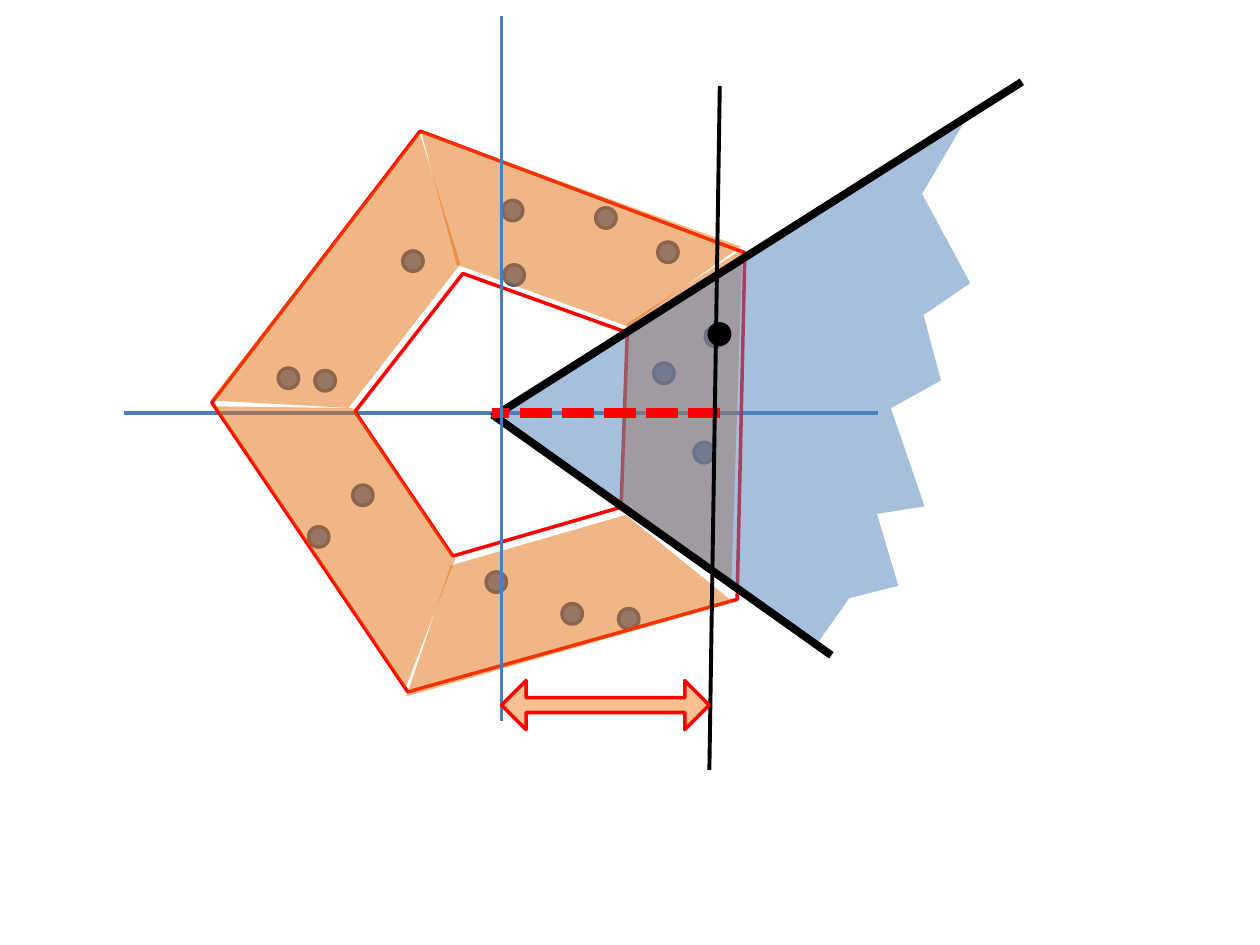
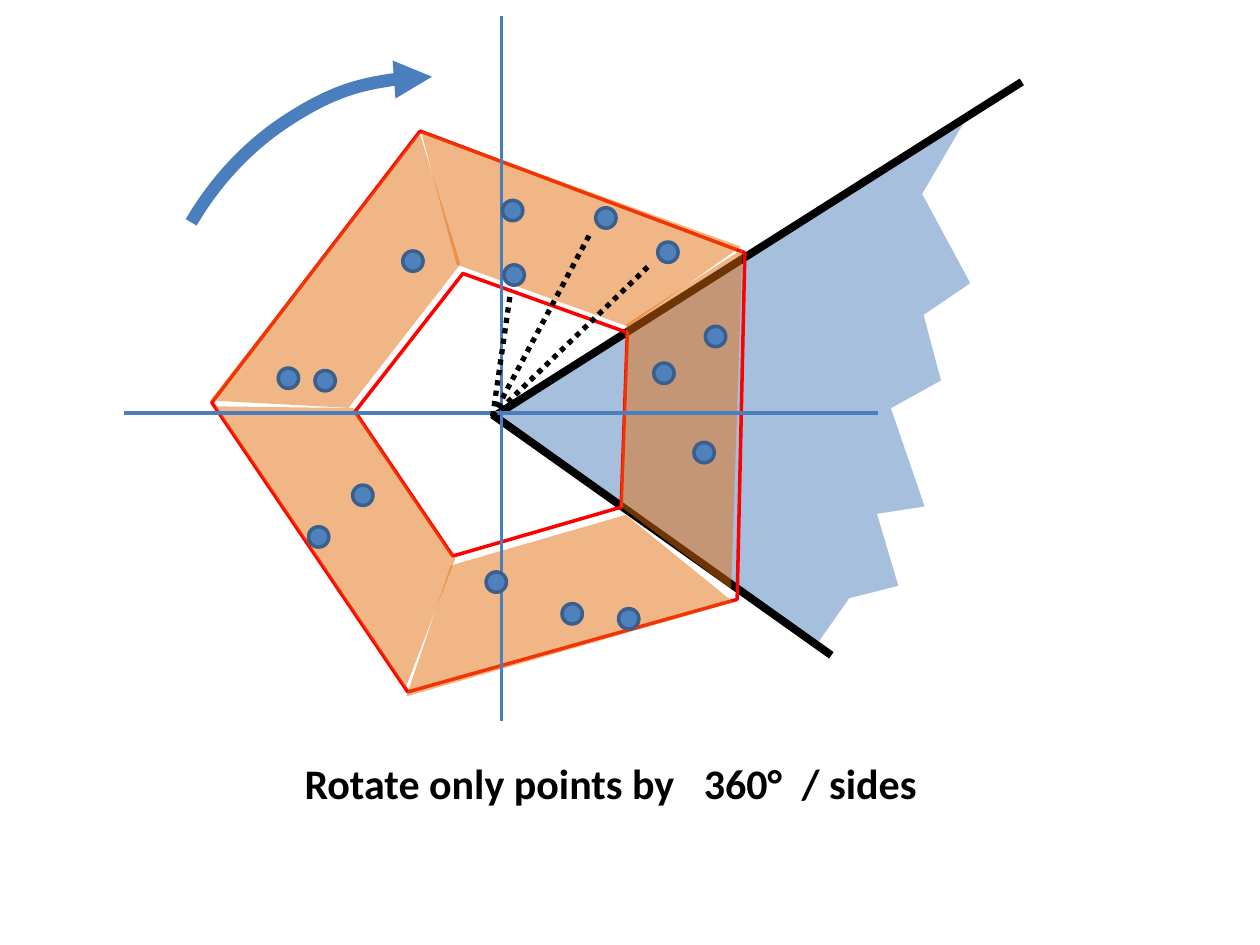
import pptx
import pptx.dml.color
import pptx.enum.dml
import pptx.enum.shapes
import pptx.oxml.ns
import pptx.util
from lxml import etree

Cm = pptx.util.Cm
Pt = pptx.util.Pt
SHAPE = pptx.enum.shapes.MSO_SHAPE
DASH = pptx.enum.dml.MSO_LINE
qn = pptx.oxml.ns.qn

BLUE, AXIS_BLUE, DOT_EDGE = "4F81BD", "4B7EBC", "3A5F8C"
ORANGE, PEACH, RED, BLACK = "E46C0A", "FAC090", "FF0000", "000000"

# Stroke styles: colour, width in points, dash
AXIS = (AXIS_BLUE, 2.25, None)
OUTLINE = (RED, 2, None)
DOT_LINE = (DOT_EDGE, 2, None)
EDGE = (BLACK, 4.5, None)
RAY = (BLACK, 3, DASH.ROUND_DOT)
CUT = (BLACK, 2.25, None)
DISTANCE = (RED, 6, DASH.SQUARE_DOT)
SWEEP = (AXIS_BLUE, 7.25, None)

# Top left corner of each region, in cm
AXES_AT = (2.49, 0.33)
RING_AT = (4.93, 2.77)
DOTS_AT = (5.61, 4.04)
SECTOR_AT = (9.93, 1.65)
RAYS_AT = (9.93, 4.72)
CUT_AT = (9.91, 1.73)

RING_TURN = 55.9
DOT_SIZE = 0.41
DOTS = [(7.57, 3.28), (8.61, 2.54), (7.65, 0.84), (6.86, 8.23), (8.38, 4.88),
        (5.72, 8.13), (6.4, 0.15), (2.51, 1.02), (4.52, 0), (4.55, 1.3),
        (4.19, 7.49), (0.61, 6.58), (0, 3.38), (1.5, 5.74), (0.74, 3.43)]
SIDE_CENTRES = [(2.27, 7.62), (2.32, 3.3), (6.39, 2.11), (8.78, 5.64), (6.24, 9.22)]
SECTOR = [(0, 6.76), (9.55, 0.74), (8.66, 2.26), (9.63, 4.06), (8.69, 4.7),
          (9.04, 6.02), (8.03, 6.58), (8.71, 8.56), (7.75, 8.71), (8.18, 10.16),
          (7.19, 10.41), (6.58, 11.28)]


def rgb(value):
    return pptx.dml.color.RGBColor.from_string(value)


def apply(obj, values):
    for name, value in values.items():
        setattr(obj, name, value)


def stroke(line, style):
    color, width, dash = style
    line.color.rgb = rgb(color)
    apply(line, {"width": Pt(width), "dash_style": dash})


def paint(sp, fill=None, line=None, opacity=None):
    """Set fill, outline and opacity in percent; a missing one means none."""
    sp.shadow.inherit = False
    if fill:
        sp.fill.solid()
        sp.fill.fore_color.rgb = rgb(fill)
    else:
        sp.fill.background()
    if opacity:
        clr = sp.fill._xPr.find(qn("a:solidFill"))[0]
        etree.SubElement(clr, qn("a:alpha"), val=str(opacity * 1000))
    if line:
        stroke(sp.line, line)
    else:
        sp.line.fill.background()


def add_shape(shapes, kind, at, box, rotation=0, adjust=(), **look):
    """Add a preset shape; box is relative to the corner at."""
    x, y, w, h = box
    sp = shapes.add_shape(kind, Cm(at[0] + x), Cm(at[1] + y), Cm(w), Cm(h))
    sp.rotation = rotation
    for i, value in enumerate(adjust):
        sp.adjustments[i] = value
    paint(sp, **look)
    return sp


def add_line(shapes, at, start, end, style):
    ends = [Cm(o + v) for point in (start, end) for o, v in zip(at, point)]
    c = shapes.add_connector(pptx.enum.shapes.MSO_CONNECTOR.STRAIGHT, *ends)
    stroke(c.line, style)
    etree.SubElement(c._element.spPr, qn("a:effectLst"))


def draw_axes(slide, at):
    add_line(slide.shapes, at, (0, 8), (15.21, 8), AXIS)
    add_line(slide.shapes, at, (7.62, 13.79), (7.62, 0), AXIS)


def draw_lower_axis(slide, at):
    add_line(slide.shapes, at, (7.62, 14.2), (7.62, 0.38), AXIS)


def draw_dots(slide, at):
    shapes = slide.shapes.add_group_shape().shapes
    for x, y in DOTS:
        add_shape(shapes, SHAPE.OVAL, at, (x, y, DOT_SIZE, DOT_SIZE),
                  fill=BLUE, line=DOT_LINE)


def draw_ring(slide, at):
    """Two pentagon outlines with five translucent sides between them."""
    shapes = slide.shapes.add_group_shape().shapes
    for box in [(0, 0, 11.4, 10.59), (2.62, 2.74, 5.69, 5.44)]:
        add_shape(shapes, SHAPE.REGULAR_PENTAGON, at, box, RING_TURN, line=OUTLINE)
    w, h = 6.86, 2.29
    for i, (cx, cy) in enumerate(SIDE_CENTRES):
        add_shape(shapes, SHAPE.TRAPEZOID, at, (cx - w / 2, cy - h / 2, w, h),
                  RING_TURN + 72 * i, [0.696], fill=ORANGE, opacity=49)


def draw_sector(slide, at):
    shapes = slide.shapes.add_group_shape().shapes
    points = [(Cm(at[0] + x), Cm(at[1] + y)) for x, y in SECTOR]
    fb = shapes.build_freeform(*points[0])
    fb.add_line_segments(points[1:], close=True)
    paint(fb.convert_to_shape(), fill=BLUE, opacity=50)
    add_line(shapes, at, (6.83, 11.56), (0, 6.71), EDGE)
    add_line(shapes, at, (0, 6.76), (10.67, 0), EDGE)


def draw_cut(slide, at):
    """Line through the chosen point and its dashed distance from the centre."""
    add_line(slide.shapes, at, (4.6, 6.6), (0, 6.6), DISTANCE)
    add_line(slide.shapes, at, (4.39, 13.79), (4.6, 0), CUT)
    add_shape(slide.shapes, SHAPE.OVAL, at, (4.39, 4.8, DOT_SIZE, DOT_SIZE),
              fill=BLACK, line=(BLACK, 2, None))


def draw_distance_arrow(slide, at):
    add_shape(slide.shapes, SHAPE.LEFT_RIGHT_ARROW, at, (0.2, 11.99, 4.19, 0.99),
              adjust=[0.302, 0.5], fill=PEACH, line=OUTLINE)


def draw_sweep(slide, at):
    """Curved arrow that shows the sense of rotation."""
    sp = add_shape(slide.shapes, SHAPE.ARC, at, (0, 0, 13, 11.61), 270,
                   [183.77, 0], line=SWEEP)
    etree.SubElement(sp.line._get_or_add_ln(), qn("a:tailEnd"), type="triangle")


def draw_rays(slide, at):
    shapes = slide.shapes.add_group_shape().shapes
    for end in [(3.18, 0.61), (1.96, 0), (0.36, 1.19)]:
        add_line(shapes, at, (0, 3.68), end, RAY)


def draw_caption(slide, at, text, tabs):
    tb = slide.shapes.add_textbox(Cm(at[0]), Cm(at[1]), Cm(13.5), Cm(1.27))
    tf = tb.text_frame
    tf.word_wrap = True
    p = tf.paragraphs[0]
    tab_list = etree.SubElement(p._p.get_or_add_pPr(), qn("a:tabLst"))
    for pos in tabs:
        etree.SubElement(tab_list, qn("a:tab"), pos=str(Cm(pos)), algn="l")
    r = p.add_run()
    r.text = text
    apply(r.font, {"name": "Calibri", "size": Pt(24), "bold": True})
    r.font.color.rgb = rgb(BLACK)


def build_distance_slide(slide):
    draw_axes(slide, AXES_AT)
    draw_dots(slide, DOTS_AT)
    draw_ring(slide, RING_AT)
    draw_sector(slide, SECTOR_AT)
    draw_cut(slide, CUT_AT)
    draw_lower_axis(slide, AXES_AT)
    draw_distance_arrow(slide, CUT_AT)


def build_rotation_slide(slide):
    draw_sector(slide, SECTOR_AT)
    draw_ring(slide, RING_AT)
    draw_axes(slide, AXES_AT)
    draw_lower_axis(slide, AXES_AT)
    draw_sweep(slide, (2.21, 2.24))
    draw_dots(slide, DOTS_AT)
    draw_rays(slide, RAYS_AT)
    draw_caption(slide, (5.89, 15.14), "Rotate only points by\t360°\t/ sides", (8.05, 10.02))


def main():
    prs = pptx.Presentation()
    apply(prs, {"slide_width": Cm(25.4), "slide_height": Cm(19.05)})
    for build in (build_distance_slide, build_rotation_slide):
        build(prs.slides.add_slide(prs.slide_layouts[6]))
    prs.save("out.pptx")


if __name__ == "__main__":
    main()
